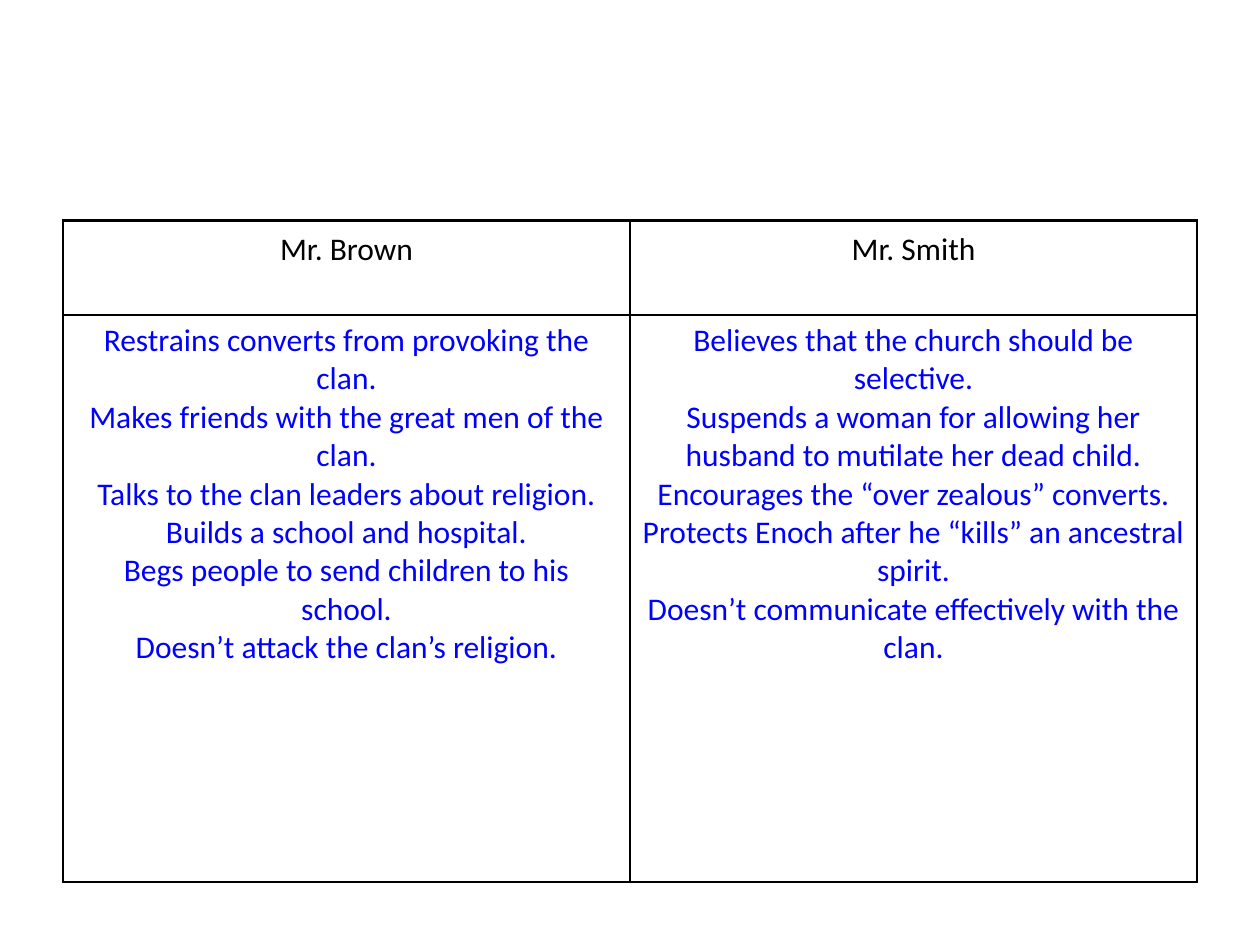
"""Build a slide comparing Mr. Brown and Mr. Smith in a table."""
import pptx
import pptx.dml.color
import pptx.enum.text
import pptx.oxml
import pptx.oxml.ns
import pptx.util
from pptx.util import Inches

COLORS = {"paper": "FFFFFF", "heading": "000000", "trait": "0000FF", "border": "000000"}
FONT = "Calibri"
MISSIONARIES = {
    "Mr. Brown": [
        "Restrains converts from provoking the clan.",
        "Makes friends with the great men of the clan.",
        "Talks to the clan leaders about religion.",
        "Builds a school and hospital.",
        "Begs people to send children to his school.",
        "Doesn’t attack the clan’s religion.",
    ],
    "Mr. Smith": [
        "Believes that the church should be selective.",
        "Suspends a woman for allowing her husband to mutilate her dead child.",
        "Encourages the “over zealous” converts.",
        "Protects Enoch after he “kills” an ancestral spirit.",
        "Doesn’t communicate effectively with the clan.",
    ],
}
LEFT, TOP, WIDTH = 0.5, 1.75, 9
ROW_HEIGHTS = [0.75, 4.5]
BORDER_WIDTH = 1.5
HEADING_INSET = 0.08


def rgb(name):
    return pptx.dml.color.RGBColor.from_string(COLORS[name])


def add_borders(cell):
    properties = cell._tc.get_or_add_tcPr()
    for position, side in enumerate(("lnL", "lnR", "lnT", "lnB")):
        properties.insert(position, pptx.oxml.parse_xml(
            f'<a:{side} {pptx.oxml.ns.nsdecls("a")} w="{pptx.util.Pt(BORDER_WIDTH)}">'
            f'<a:solidFill><a:srgbClr val="{COLORS["border"]}"/></a:solidFill></a:{side}>'))


def write(cell, lines, color, size=18, inset=None):
    if inset is not None:
        cell.margin_left = cell.margin_right = Inches(inset)
        cell.margin_top = cell.margin_bottom = Inches(inset)
    cell.fill.solid()
    cell.fill.fore_color.rgb = rgb("paper")
    add_borders(cell)
    cell.text_frame.text = "\n".join(lines)
    for paragraph in cell.text_frame.paragraphs:
        paragraph.alignment = pptx.enum.text.PP_ALIGN.CENTER
        for run in paragraph.runs:
            run.font.name = FONT
            run.font.size = pptx.util.Pt(size)
            run.font.bold = False
            run.font.color.rgb = rgb(color)


def main():
    deck = pptx.Presentation()
    deck.slide_width, deck.slide_height = Inches(10), Inches(7.5)
    slide = deck.slides.add_slide(deck.slide_layouts[6])
    comparison = slide.shapes.add_table(
        len(ROW_HEIGHTS), len(MISSIONARIES),
        Inches(LEFT), Inches(TOP), Inches(WIDTH), Inches(sum(ROW_HEIGHTS))).table
    comparison.first_row = comparison.horz_banding = False
    for row, height in zip(comparison.rows, ROW_HEIGHTS):
        row.height = Inches(height)
    for column, (missionary, traits) in enumerate(MISSIONARIES.items()):
        comparison.columns[column].width = Inches(WIDTH / len(MISSIONARIES))
        write(comparison.cell(0, column), [missionary], "heading", inset=HEADING_INSET)
        write(comparison.cell(1, column), traits, "trait")
    deck.save("out.pptx")


if __name__ == "__main__":
    main()
